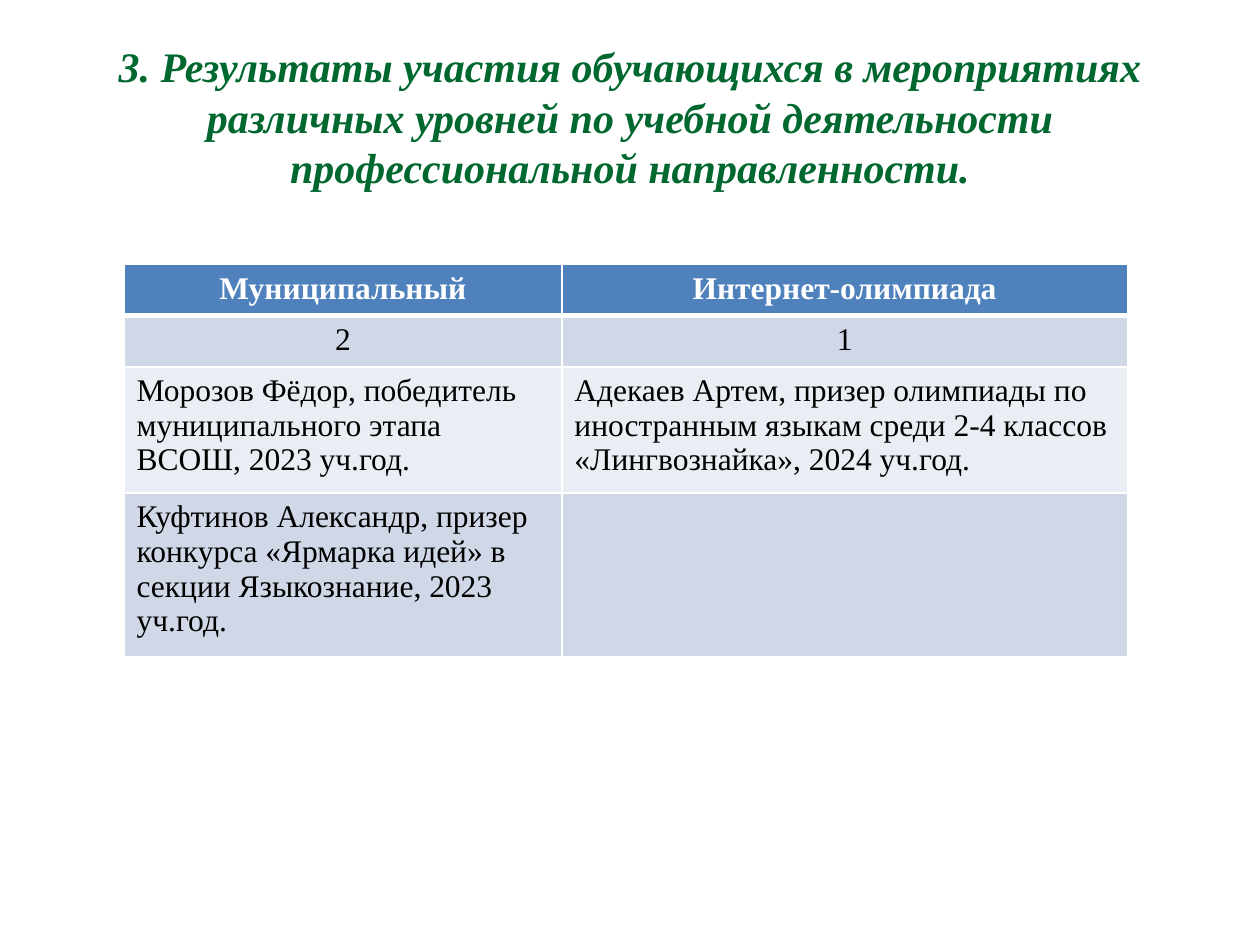
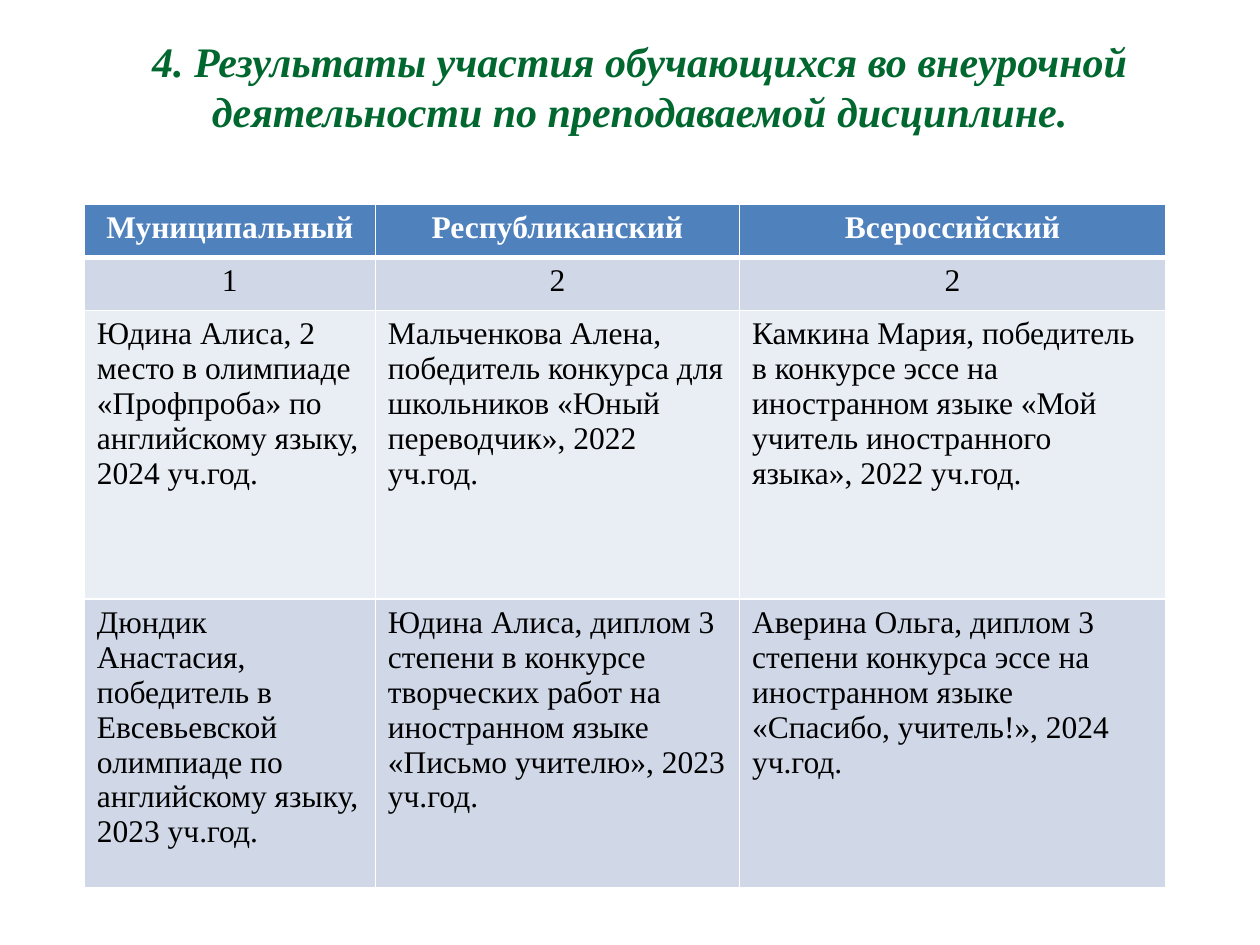
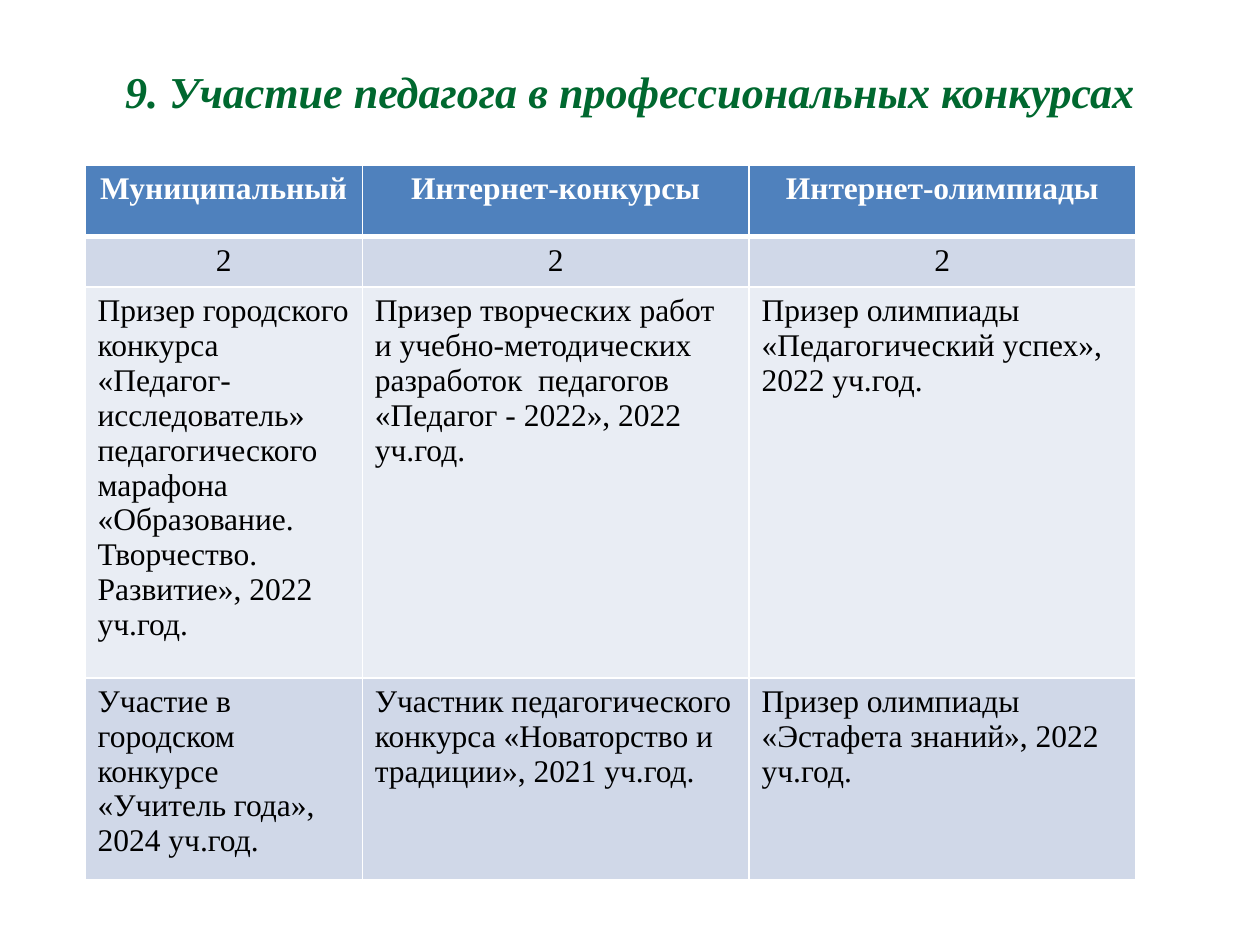
from lxml.etree import SubElement
from pptx import Presentation
from pptx.dml.color import RGBColor
from pptx.enum.text import MSO_ANCHOR, PP_ALIGN
from pptx.oxml.ns import qn
from pptx.util import Pt

FONT = "Times New Roman"
TITLE_GREEN = RGBColor(0x00, 0x68, 0x2F)
HEADER_BLUE = RGBColor(0x4F, 0x81, 0xBD)
BAND_DARK = RGBColor(0xD0, 0xD8, 0xE8)
BAND_LIGHT = RGBColor(0xE9, 0xED, 0xF4)
WHITE = RGBColor(0xFF, 0xFF, 0xFF)
BLACK = RGBColor(0x00, 0x00, 0x00)
ROW_FILLS = [HEADER_BLUE, BAND_DARK, BAND_LIGHT, BAND_DARK]

PAGES = [
    {
        "title": "3. Результаты участия обучающихся в мероприятиях различных уровней "
                 "по учебной деятельности профессиональной направленности.",
        "title_area": (36, 21.6, 648, 90),
        "title_size": 24,
        "table_corner": (70.9, 151.2),
        "columns": [250.2, 323.2],
        "rows": [29.2, 29.2, 29.2, 29.2],
        "cells": [
            ["Муниципальный", "Интернет-олимпиада"],
            ["2", "1"],
            ["Морозов Фёдор, победитель муниципального этапа ВСОШ, 2023 уч.год.",
             "Адекаев Артем, призер олимпиады по иностранным языкам среди 2-4 классов "
             "«Лингвознайка», 2024 уч.год."],
            ["Куфтинов Александр, призер конкурса «Ярмарка идей» в секции Языкознание, "
             "2023 уч.год.", ""],
        ],
    },
    {
        "title": "4. Результаты участия обучающихся во внеурочной деятельности "
                 "по преподаваемой дисциплине.",
        "title_area": (31, 9.4, 669, 79.2),
        "title_size": 24,
        "table_corner": (48.2, 116.6),
        "columns": [166.3, 208.1, 243.4],
        "rows": [30.4, 30.4, 165, 165],
        "cells": [
            ["Муниципальный", "Республиканский", "Всероссийский"],
            ["1", "2", "2"],
            ["Юдина Алиса, 2 место в олимпиаде «Профпроба» по английскому языку, 2024 уч.год.",
             "Мальченкова Алена, победитель конкурса для школьников «Юный переводчик», "
             "2022 уч.год.",
             "Камкина Мария, победитель в конкурсе эссе на иностранном языке "
             "«Мой учитель иностранного языка», 2022 уч.год."],
            ["Дюндик Анастасия, победитель в Евсевьевской олимпиаде по английскому языку, "
             "2023 уч.год.",
             "Юдина Алиса, диплом 3 степени в конкурсе творческих работ на иностранном языке "
             "«Письмо учителю», 2023 уч.год.",
             "Аверина Ольга, диплом 3 степени конкурса эссе на иностранном языке "
             "«Спасибо, учитель!», 2024 уч.год."],
        ],
    },
    {
        "title": "9. Участие педагога в профессиональных конкурсах",
        "title_area": (36, 21.6, 648, 61.2),
        "title_size": 25.2,
        "table_corner": (48.6, 94.5),
        "columns": [158.4, 221, 221],
        "rows": [40.8, 23.8, 215.6, 110.9],
        "cells": [
            ["Муниципальный", "Интернет-конкурсы", "Интернет-олимпиады"],
            ["2", "2", "2"],
            ["Призер городского конкурса «Педагог-исследователь» педагогического марафона "
             "«Образование. Творчество. Развитие», 2022 уч.год.",
             "Призер творческих работ и учебно-методических разработок  педагогов "
             "«Педагог - 2022», 2022 уч.год.",
             "Призер олимпиады «Педагогический успех», 2022 уч.год."],
            ["Участие в городском конкурсе «Учитель года», 2024 уч.год.",
             "Участник педагогического конкурса «Новаторство и традиции», 2021 уч.год.",
             "Призер олимпиады «Эстафета знаний», 2022 уч.год."],
        ],
    },
]


def write_text(frame, text, size, color, bold, italic, alignment):
    paragraph = frame.paragraphs[0]
    paragraph.text = text
    paragraph.alignment = alignment
    font = paragraph.font
    font.name, font.size, font.bold, font.italic = FONT, Pt(size), bold, italic
    font.color.rgb = color


def add_border(cell, side, width):
    line = SubElement(cell._tc.get_or_add_tcPr(), qn(f"a:ln{side}"), w=str(Pt(width)))
    fill = SubElement(line, qn("a:solidFill"))
    SubElement(fill, qn("a:srgbClr"), val=str(WHITE))


deck = Presentation()
deck.slide_width, deck.slide_height = Pt(720), Pt(540)

for page in PAGES:
    slide = deck.slides.add_slide(deck.slide_layouts[6])

    title_box = slide.shapes.add_textbox(*map(Pt, page["title_area"]))
    title_box.text_frame.word_wrap = True
    title_box.text_frame.vertical_anchor = MSO_ANCHOR.MIDDLE
    write_text(title_box.text_frame, page["title"], page["title_size"],
               TITLE_GREEN, True, True, PP_ALIGN.CENTER)

    columns, rows = page["columns"], page["rows"]
    left, top = page["table_corner"]
    table = slide.shapes.add_table(len(rows), len(columns), Pt(left), Pt(top),
                                   Pt(sum(columns)), Pt(sum(rows))).table
    for column, width in zip(table.columns, columns):
        column.width = Pt(width)
    for row, height in zip(table.rows, rows):
        row.height = Pt(height)

    for row_index, texts in enumerate(page["cells"]):
        is_header = row_index == 0
        alignment = PP_ALIGN.CENTER if row_index < 2 else PP_ALIGN.LEFT
        for column_index, text in enumerate(texts):
            cell = table.cell(row_index, column_index)
            add_border(cell, "L", 1)
            add_border(cell, "R", 1)
            add_border(cell, "T", 3 if row_index == 1 else 1)
            add_border(cell, "B", 3 if is_header else 1)
            cell.fill.solid()
            cell.fill.fore_color.rgb = ROW_FILLS[row_index]
            write_text(cell.text_frame, text, 18, WHITE if is_header else BLACK,
                       is_header, False, alignment)

deck.save("out.pptx")
